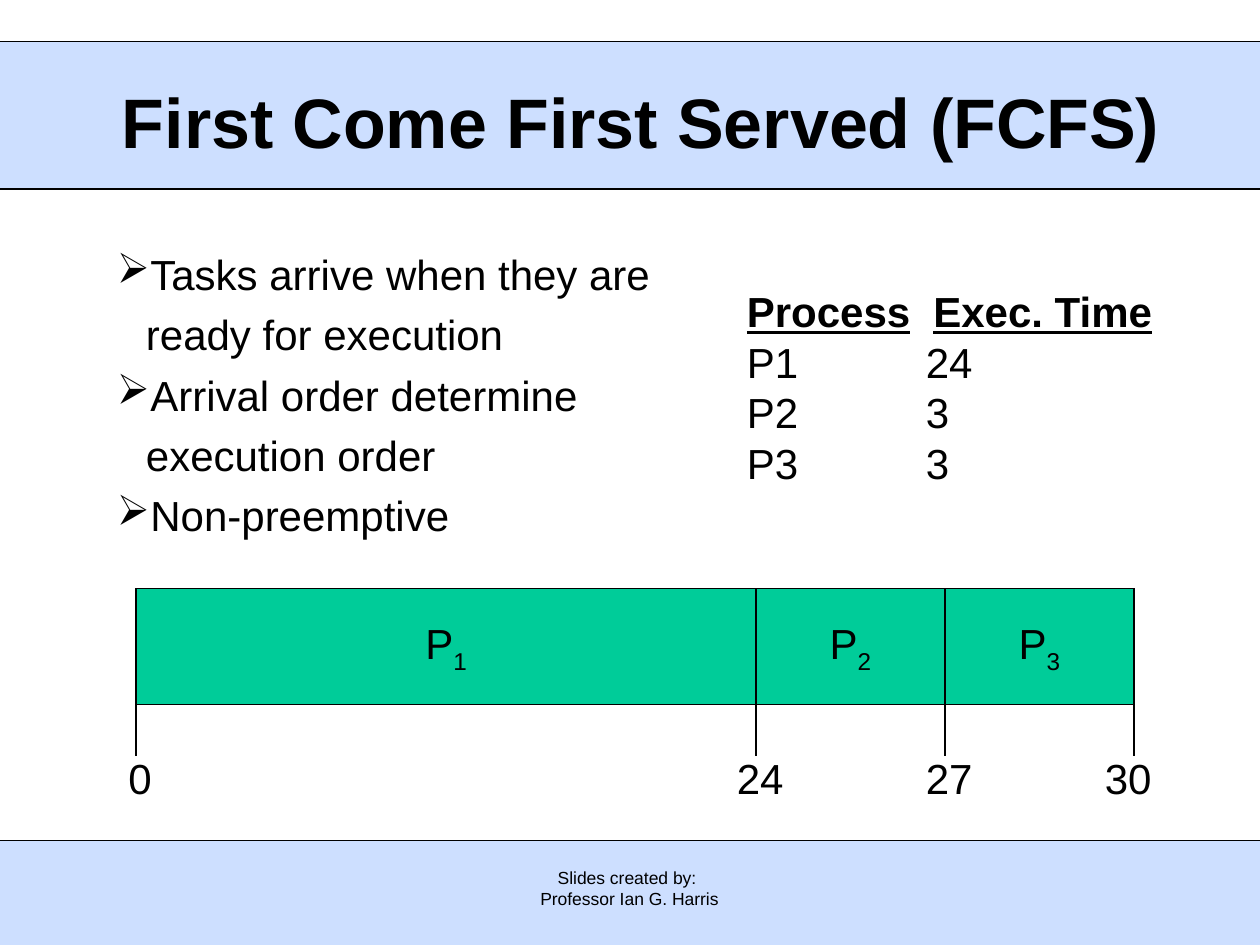
from pptx import Presentation
from pptx.dml.color import RGBColor
from pptx.enum.shapes import MSO_CONNECTOR as Connector, MSO_SHAPE as Shape
from pptx.enum.text import MSO_ANCHOR as Anchor, PP_ALIGN as Align
from pptx.oxml.ns import qn
from pptx.util import Inches, Pt
from lxml.etree import SubElement

BULLETS = [
    "Tasks arrive when they are ready for execution",
    "Arrival order determine execution order",
    "Non-preemptive",
]
EXEC_TIMES = [("P1", 24), ("P2", 3), ("P3", 3)]
EDGES = [1.08, 6, 7.5, 9]
TIME_LABELS = [("0", 0.92), ("24", 5.75), ("27", 7.25), ("30", 8.67)]


def color(hex_string):
    return RGBColor.from_string(hex_string)


def add_bullet(paragraph, char, indent):
    properties = paragraph._p.get_or_add_pPr()
    properties.set("marL", str(Inches(indent)))
    properties.set("indent", str(-Inches(indent)))
    SubElement(properties, qn("a:buChar")).set("char", char)


def add_tab(paragraph, position):
    tabs = SubElement(paragraph._p.get_or_add_pPr(), qn("a:tabLst"))
    SubElement(tabs, qn("a:tab"), pos=str(Inches(position)), algn="l")


def write(paragraph, text, size=24, bold=False, underline=False,
          align=Align.LEFT, baseline=None):
    """Append one formatted run to the paragraph."""
    paragraph.alignment = align
    run = paragraph.add_run()
    run.text = text
    font = run.font
    font.name, font.size = SlideBuilder.FONT, Pt(size)
    font.bold, font.underline = bold, underline
    font.color.rgb = color(SlideBuilder.INK)
    if baseline is not None:
        run._r.get_or_add_rPr().set("baseline", str(baseline * 1000))


class SlideBuilder:
    FONT = "Arial"
    INK = "000000"
    BAND = "CDDFFF"
    PROCESS = "00CC99"
    LINE_WIDTH = Pt(0.75)

    def __init__(self, slide):
        self.slide = slide

    def rectangle(self, left, top, width, height, fill, line):
        shape = self.slide.shapes.add_shape(
            Shape.RECTANGLE, Inches(left), Inches(top), Inches(width), Inches(height))
        shape.shadow.inherit = False
        shape.fill.solid()
        shape.fill.fore_color.rgb = color(fill)
        shape.line.color.rgb = color(line)
        shape.line.width = self.LINE_WIDTH
        return shape

    def line(self, x1, y1, x2, y2):
        connector = self.slide.shapes.add_connector(
            Connector.STRAIGHT, Inches(x1), Inches(y1), Inches(x2), Inches(y2))
        connector.line.color.rgb = color(self.INK)
        connector.line.width = self.LINE_WIDTH
        SubElement(connector._element.spPr, qn("a:effectLst"))

    def text_box(self, left, top, width, height, lines, anchor=Anchor.TOP, **style):
        """Add one paragraph per line and return the paragraphs."""
        frame = self.slide.shapes.add_textbox(
            Inches(left), Inches(top), Inches(width), Inches(height)).text_frame
        frame.word_wrap = True
        frame.vertical_anchor = anchor
        for index, text in enumerate(lines):
            paragraph = frame.add_paragraph() if index else frame.paragraphs[0]
            write(paragraph, text, **style)
        return frame.paragraphs

    def bullet_list(self, left, top, width, height, lines):
        for paragraph in self.text_box(left, top, width, height, lines):
            paragraph.line_spacing = 1.2
            add_bullet(paragraph, "➢", 0.23)

    def process_block(self, number, left, right):
        shape = self.rectangle(left, 4.67, right - left, 0.92, self.PROCESS, self.INK)
        shape.text_frame.vertical_anchor = Anchor.MIDDLE
        paragraph = shape.text_frame.paragraphs[0]
        write(paragraph, "P", align=Align.CENTER)
        write(paragraph, str(number), align=Align.CENTER, baseline=-25)

    def time_table(self, left, top, width, height):
        rows = [f"{name}\t{time}" for name, time in EXEC_TIMES]
        header, *body = self.text_box(left, top, width, height, ["", *rows])
        add_tab(header, 1.48)
        write(header, "Process\tExec. Time", bold=True, underline=True)
        for paragraph in body:
            add_tab(paragraph, 1.42)


def main():
    presentation = Presentation()
    presentation.slide_width, presentation.slide_height = Inches(10), Inches(7.5)
    builder = SlideBuilder(presentation.slides.add_slide(presentation.slide_layouts[6]))

    for top, height in [(6.67, 0.83), (0.33, 1.17)]:
        builder.rectangle(0, top, 10, height, builder.BAND, builder.BAND)
    for y in (0.33, 1.5, 6.67):
        builder.line(0, y, 10, y)

    builder.text_box(3.42, 6.83, 3.15, 0.49,
                     ["Slides created by: ", "Professor Ian G. Harris"],
                     size=10, align=Align.CENTER)
    builder.text_box(0.67, 0.33, 8.83, 1.25, ["First Come First Served (FCFS)"],
                     anchor=Anchor.MIDDLE, size=40, bold=True, align=Align.CENTER)
    builder.bullet_list(0.83, 1.84, 4.58, 2.5, BULLETS)

    for number, (left, right) in enumerate(zip(EDGES, EDGES[1:]), start=1):
        builder.process_block(number, left, right)
    for x in EDGES:
        builder.line(x, 4.67, x, 6)
    for label, left in TIME_LABELS:
        builder.text_box(left, 5.92, 0.58, 0.5, [label])

    builder.time_table(5.83, 2.22, 3.43, 1.7)
    presentation.save("out.pptx")


if __name__ == "__main__":
    main()
